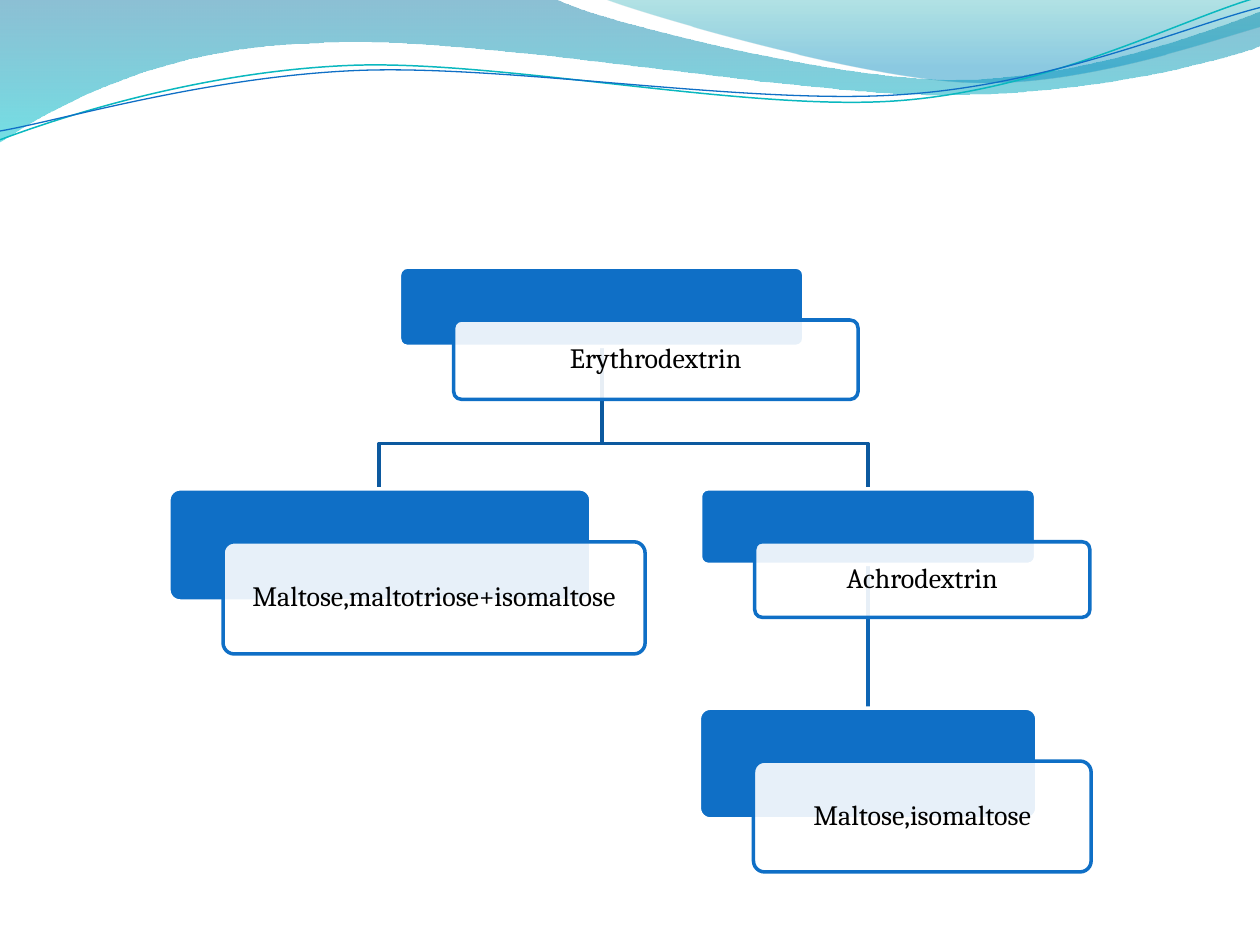
from lxml import etree
from pptx import Presentation
from pptx import util as u
from pptx.dml.color import RGBColor
from pptx.enum import shapes, text
from pptx.oxml.ns import qn

COLORS = {
    "blue": "0F6FC6", "teal": "0AB8BF", "white": "FFFFFF", "black": "000000",
    "link1": "0C599F", "link2": "0E65B4",
    "wave_top": "0074A1", "wave_bottom": "00C6CF",
    "crest_top": "00A1A9", "crest_bottom": "008BBF",
}
OFFSET = (0.43, 0.42)


def rgb(name):
    return RGBColor.from_string(COLORS[name])


class Deck:
    """Hold the style and the current slide."""

    font, size, line_width = "Cambria", u.Pt(16), u.Pt(2)

    def __init__(self, prs):
        self.s = prs.slides.add_slide(prs.slide_layouts[6])

    def opacity(self, sp, *percents):
        colors = list(sp._element.spPr.iter(qn("a:srgbClr")))
        for clr, pct in zip(colors, percents):
            etree.SubElement(clr, qn("a:alpha")).set("val", str(pct * 1000))

    def outline(self, start, segments, close):
        ends = [tuple(map(u.Inches, seg[-2:])) for seg in segments]
        fb = self.s.shapes.build_freeform(*map(u.Inches, start), scale=1.0)
        fb.add_line_segments(ends, close=close)
        sp = fb.convert_to_shape()
        sp.shadow.inherit = False
        lines = list(sp._element.spPr.iter(qn("a:lnTo")))
        for line, seg in zip(lines, segments):
            if len(seg) == 6:
                bezier = etree.Element(qn("a:cubicBezTo"))
                for x, y in zip(seg[::2], seg[1::2]):
                    pt = etree.SubElement(bezier, qn("a:pt"))
                    pt.set("x", str(u.Inches(x) - sp.left))
                    pt.set("y", str(u.Inches(y) - sp.top))
                line.getparent().replace(line, bezier)
        return sp

    def wave(self, start, segments, stops):
        sp = self.outline(start, segments, True)
        sp.fill.gradient()
        sp.fill.gradient_angle = 270
        for stop, (pos, color, _) in zip(sp.fill.gradient_stops, stops):
            stop.position = pos
            stop.color.rgb = rgb(color)
        self.opacity(sp, *(stop[2] for stop in stops))
        sp.line.fill.background()

    def stroke(self, start, segments, color, width):
        sp = self.outline(start, segments, False)
        sp.fill.background()
        sp.line.color.rgb = rgb(color)
        sp.line.width = width

    def connector(self, x, y1, y2, color):
        c = self.s.shapes.add_connector(
            shapes.MSO_CONNECTOR.STRAIGHT, *map(u.Inches, (x, y1, x, y2)))
        c.line.color.rgb = rgb(color)
        c.line.width = self.line_width
        etree.SubElement(c._element.spPr, qn("a:effectLst"))
        return c

    def box(self, x, y, w, h, fill, line, percent=100):
        sp = self.s.shapes.add_shape(
            shapes.MSO_SHAPE.ROUNDED_RECTANGLE, *map(u.Inches, (x, y, w, h)))
        sp.adjustments[0] = 0.1
        sp.shadow.inherit = False
        sp.fill.solid()
        sp.fill.fore_color.rgb = rgb(fill)
        if percent < 100:
            self.opacity(sp, percent)
        sp.line.color.rgb = rgb(line)
        sp.line.width = self.line_width
        return sp

    def node(self, label, x, y, w, h):
        back = self.box(x, y, w, h, "blue", "white")
        sp = self.box(x + OFFSET[0], y + OFFSET[1], w, h, "white", "blue", 90)
        tf = sp.text_frame
        tf.text = label
        tf.word_wrap = True
        tf.vertical_anchor = text.MSO_ANCHOR.MIDDLE
        tf.margin_left = tf.margin_right = u.Inches(0.09)
        tf.margin_top = tf.margin_bottom = u.Inches(0.09)
        p = tf.paragraphs[0]
        p.alignment = text.PP_ALIGN.CENTER
        p.line_spacing = 0.9
        r = p.runs[0]
        r.font.name, r.font.size = self.font, self.size
        r.font.color.rgb = rgb("black")
        return back


def main():
    prs = Presentation()
    prs.slide_width, prs.slide_height = u.Inches(10), u.Inches(7.5)
    d = Deck(prs)

    d.wave((0, 0), [(4.4, -0.01),
                    (4.76, 0.17, 6.64, 0.63, 7.58, 0.63),
                    (8.53, 0.63, 9.58, 0.26, 10, 0.09), (10.01, 0.36),
                    (9.83, 0.44, 8.7, 0.76, 7.46, 0.75),
                    (6.22, 0.75, 3.82, 0.28, 2.57, 0.34),
                    (1.29, 0.36, 0.46, 0.83, -0.01, 1.13)],
           [(0, "wave_top", 45), (1, "wave_bottom", 55)])
    d.wave((4.79, -0.01), [(5.09, 0.11, 6.82, 0.62, 7.69, 0.65),
                           (8.56, 0.69, 9.61, 0.32, 10, 0.21), (10, 0)],
           [(0, "crest_top", 30), (0.8, "crest_bottom", 45)])
    d.stroke((0, 1.11), [(0.48, 0.93, 1.58, 0.57, 2.77, 0.52),
                         (3.95, 0.47, 5.93, 0.89, 7.13, 0.8),
                         (8.33, 0.71, 9.38, 0.15, 9.98, -0.02)],
             "teal", u.Pt(0.85))
    d.stroke((0, 1.04), [(0.47, 0.96, 1.64, 0.61, 2.83, 0.56),
                         (4.03, 0.51, 5.97, 0.84, 7.17, 0.75),
                         (8.36, 0.67, 9.41, 0.21, 10, 0.06)],
             "blue", u.Pt(0.75))

    root_x, left_x, right_x = 4.78, 3.01, 6.89
    link = d.connector(right_x, 4.48, 5.62, "link2")
    for x in (right_x, left_x):
        d.stroke((root_x, 2.75), [(root_x, 3.52), (x, 3.52), (x, 3.88)],
                 "link1", d.line_width)

    d.node("Erythrodextrin", 3.17, 2.12, 3.21, 0.63)
    d.node("Maltose,maltotriose+isomaltose", 1.34, 3.88, 3.35, 0.89)
    achro = d.node("Achrodextrin", 5.56, 3.88, 2.66, 0.6)
    maltose = d.node("Maltose,isomaltose", 5.55, 5.62, 2.68, 0.88)
    link.begin_connect(achro, 2)
    link.end_connect(maltose, 0)

    prs.save("out.pptx")


if __name__ == "__main__":
    main()
